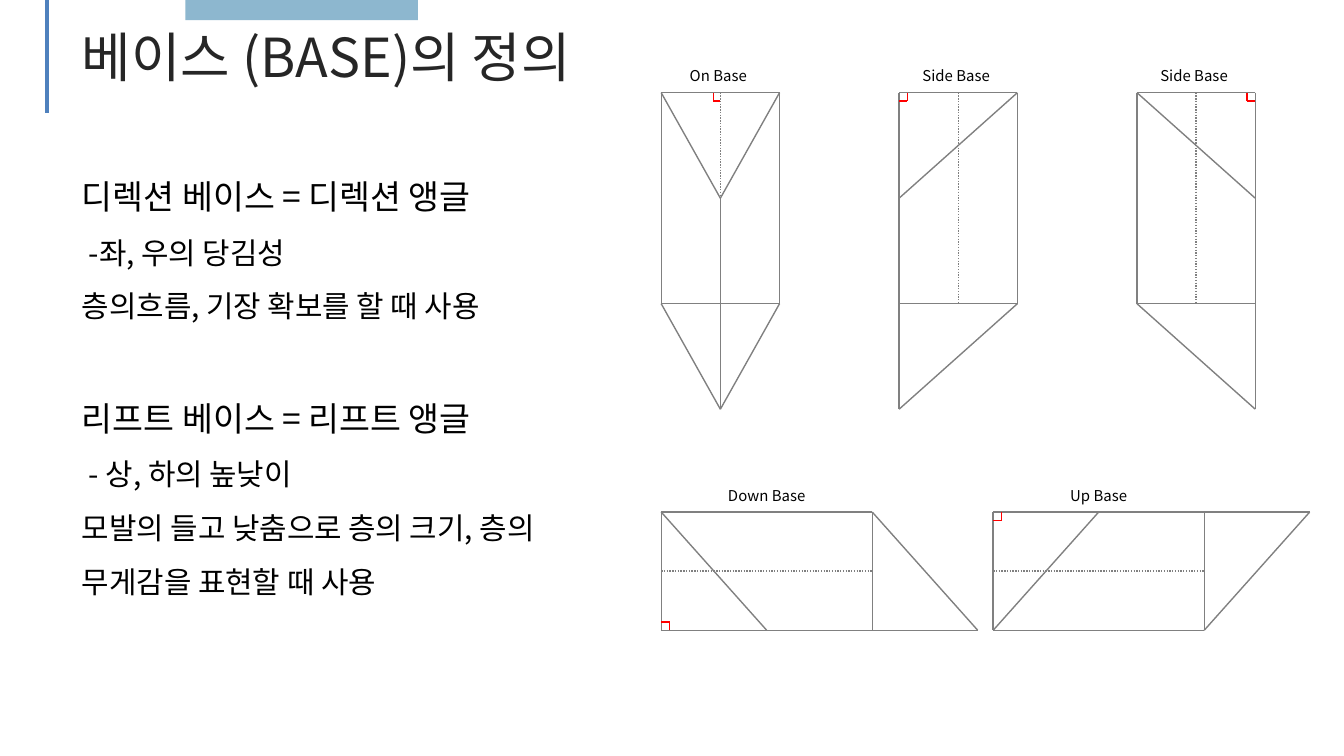
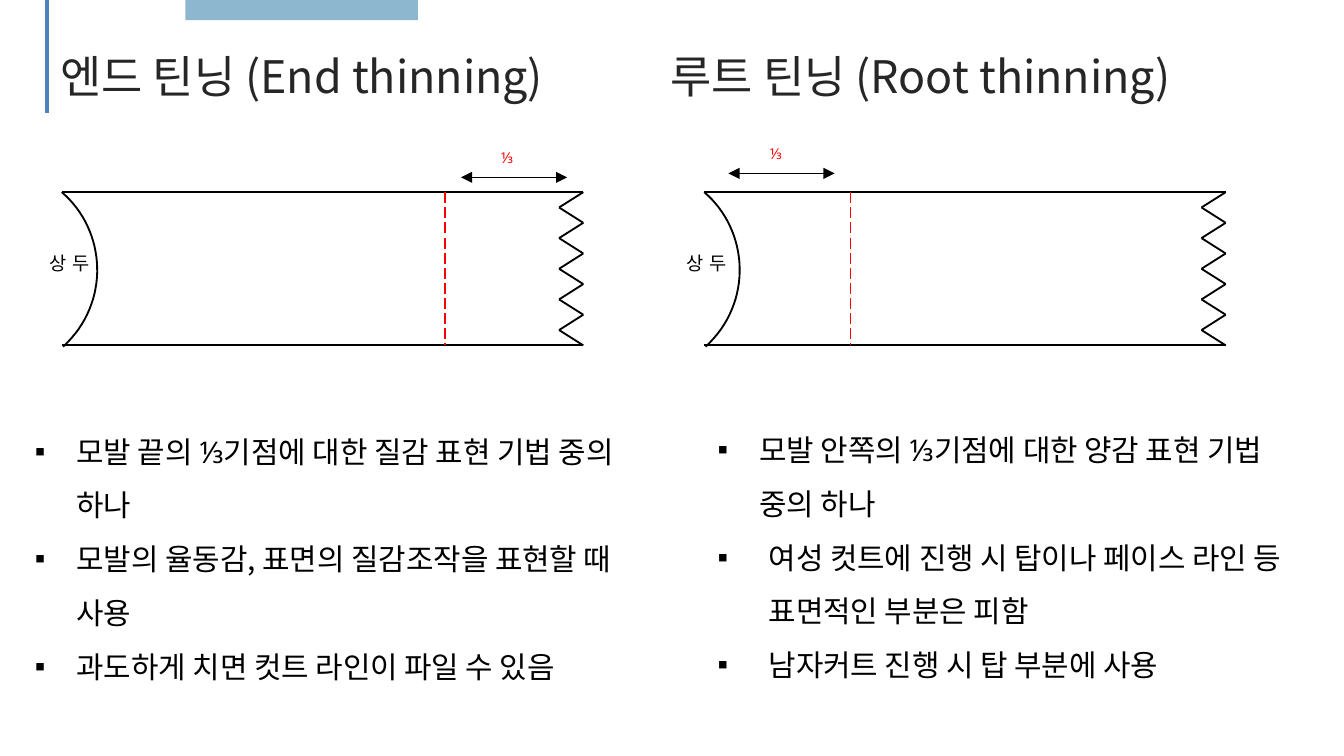
from lxml import etree
from pptx import Presentation
from pptx.dml.color import RGBColor
from pptx.enum.dml import MSO_LINE
from pptx.enum.shapes import MSO_CONNECTOR, MSO_SHAPE
from pptx.enum.text import MSO_ANCHOR, MSO_AUTO_SIZE, PP_ALIGN
from pptx.oxml.ns import qn
from pptx.util import Inches, Pt

STRAIGHT = MSO_CONNECTOR.STRAIGHT
RECT = MSO_SHAPE.RECTANGLE
DOTS, DASHES = MSO_LINE.ROUND_DOT, MSO_LINE.LONG_DASH
LEFT, CENTER = PP_ALIGN.LEFT, PP_ALIGN.CENTER
MIDDLE, TOP = MSO_ANCHOR.MIDDLE, MSO_ANCHOR.TOP
FIXED = MSO_AUTO_SIZE.NONE

WIDE = 10
HIGH = WIDE * 9 / 16
FONT = "Noto Sans CJK KR"
BLACK, INK, GRAY, RED = "000000", "262626", "808080", "FF0000"
BAND, BLUE = "8DB7CF", "4F81BD"

# Base diagrams: u runs across the panel, v along its length.
PANEL_W, PANEL_L = 0.88, 1.57
FRAME = [(0, 0, 0, 1), (1, 0, 1, 1), (0, 1, 1, 1), (0, 0, 1, 0)]
ON_FOLDS = [(0, 0, 0.5, 0.5), (1, 0, 0.5, 0.5), (0.5, 0.5, 0.5, 1.5),
            (0, 1, 0.5, 1.5), (1, 1, 0.5, 1.5)]
ON_MARK = [(0.44, 0, 0.44, 0.04), (0.5, 0.04, 0.44, 0.04)]
SIDE_FOLDS = [(1, 0, 0, 0.5), (1, 1, 0, 1.5), (0, 0.5, 0, 1.5)]
SIDE_MARK = [(0.07, 0, 0.07, 0.04), (0, 0.04, 0.07, 0.04)]

# Hair strands
HAIR_W, HAIR_H, HAIR_TOP = 3.88, 1.14, 1.43
TEETH, TOOTH = 5, 0.18


def color(value):
    return RGBColor.from_string(value)


def place(shape, x, y, w, h):
    shape.left, shape.top = Inches(x), Inches(y)
    shape.width, shape.height = Inches(w), Inches(h)


def add(parent, tag, **attrs):
    return etree.SubElement(parent, qn(tag), attrs)


def style(para, size, tint=BLACK, font=FONT):
    for run in para.runs:
        run.font.size = Pt(size)
        run.font.color.rgb = color(tint)
        run.font.name = font
        add(run.font._element, "a:ea", typeface=FONT)


def rule(shapes, x1, y1, x2, y2, tint=GRAY, width=0.75, dash=None, heads=False):
    line = shapes.add_connector(STRAIGHT, Inches(x1), Inches(y1), Inches(x2), Inches(y2))
    line.line.color.rgb = color(tint)
    line.line.width = Pt(width)
    if dash:
        line.line.dash_style = dash
    props = line.element.spPr
    if heads:
        for end in ("a:headEnd", "a:tailEnd"):
            add(props.find(qn("a:ln")), end, type="triangle")
    add(props, "a:effectLst")


def label(shapes, text, x, y, w, h, size=8, tint=BLACK, align=LEFT, wrap=True):
    box = shapes.add_textbox(Inches(x), Inches(y), Inches(w), Inches(h))
    frame = box.text_frame
    frame.text = text
    frame.word_wrap = wrap
    frame.paragraphs[0].alignment = align
    style(frame.paragraphs[0], size, tint)
    return frame


def add_band(prs, slide):
    """Put the colour band on the master, so that every slide shows it."""
    band = slide.shapes.add_shape(RECT, Inches(1.38), Inches(-0.02), Inches(1.73), Inches(0.17))
    band.shadow.inherit = False
    band.fill.solid()
    band.fill.fore_color.rgb = color(BAND)
    band.line.fill.background()
    prs.slide_master.shapes.element.append(band.element)


def head(slide, text, x, y, w, size, tab=None):
    rule(slide.shapes, 0.35, -0.05, 0.35, 0.84, BLUE, 2)
    title = slide.shapes.title
    place(title, x, y, w, 0.84)
    frame = title.text_frame
    frame.text = text
    frame.auto_size = FIXED
    frame.vertical_anchor = MIDDLE
    para = frame.paragraphs[0]
    if tab:
        stops = add(para._p.get_or_add_pPr(), "a:tabLst")
        add(stops, "a:tab", pos=str(Inches(tab)), algn="l")
    para.alignment = LEFT
    style(para, size, INK)


def body(slide, index, box, items):
    """Fill a body placeholder; items are (text, size, indent, bullet, gap, font)."""
    holder = slide.placeholders[index]
    place(holder, *box)
    frame = holder.text_frame
    frame.auto_size = FIXED
    frame.vertical_anchor = TOP
    for i, (text, size, indent, bullet, gap, font) in enumerate(items):
        para = frame.add_paragraph() if i else frame.paragraphs[0]
        para.text = text
        props = para._p.get_or_add_pPr()
        props.set("marL", str(Inches(indent)))
        props.set("indent", str(Inches(-indent if bullet else 0)))
        if bullet:
            add(props, "a:buChar", char=bullet)
        else:
            add(props, "a:buNone")
        para.alignment = LEFT
        para.line_spacing = Pt(1.8 * size)
        para.space_before = Pt(gap)
        para.space_after = Pt(0)
        style(para, size, font=font)


def panel(slide, x, y, folds, mark, upright=True, flip=False):
    group = slide.shapes.add_group_shape().shapes

    def spot(u, v):
        u = 1 - u if flip else u
        if upright:
            return x + u * PANEL_W, y + v * PANEL_L
        return x + v * PANEL_L, y + u * PANEL_W

    def draw(parts, **look):
        for u1, v1, u2, v2 in parts:
            rule(group, *spot(u1, v1), *spot(u2, v2), **look)

    draw(FRAME)
    draw([(0.5, 0, 0.5, 1)], dash=DOTS)
    draw(folds)
    draw(mark, tint=RED)


def curve(shapes, x, y):
    """Draw the scalp edge as a Bezier arc that starts at x, y."""
    xs, ys = (0, 0.33, 0.37, 0.01), (0, 0.28, 0.82, 1.15)

    def blend(c, t):
        s = 1 - t
        return c[0] * s**3 + 3 * c[1] * s * s * t + 3 * c[2] * s * t * t + c[3] * t**3

    steps = 32
    dots = [(Inches(x + blend(xs, i / steps)), Inches(y + blend(ys, i / steps)))
            for i in range(steps + 1)]
    pen = shapes.build_freeform(*dots[0])
    pen.add_line_segments(dots[1:], close=False)
    arc = pen.convert_to_shape()
    arc.shadow.inherit = False
    arc.fill.background()
    arc.line.color.rgb = color(BLACK)
    arc.line.width = Pt(1)


def strand(slide, x, cut, span, rise, note):
    """Draw a strand at x; cut, span and note are offsets from its left edge."""
    group = slide.shapes.add_group_shape().shapes
    y, right, base = HAIR_TOP, x + HAIR_W, HAIR_TOP + HAIR_H
    rule(group, right, y, x, y, BLACK, 1)
    curve(group, x, y)
    rule(group, right, base, x, base, BLACK, 1)
    step = HAIR_H / (2 * TEETH)
    zigzag = [(right - TOOTH * (i % 2), y + i * step) for i in range(2 * TEETH + 1)]
    for start, end in zip(zigzag, zigzag[1:]):
        rule(group, *start, *end, BLACK, 1)
    rule(group, x + cut, y, x + cut, base, RED, dash=DASHES)
    rule(group, x + span, y - rise, x + span + 0.79, y - rise, BLACK, 0.25, heads=True)
    label(group, "⅓", x + note, y - rise - 0.26, 0.31, 0.24, tint=RED, wrap=False)


def base_slide(slide):
    head(slide, "베이스 (BASE)의 정의", 0.51, 0, 4.34, 28.8)
    rows = [("디렉션 베이스 = 디렉션 앵글", 18, 0, 0),
            ("-좌, 우의 당김성", 16, 0.05, 0),
            ("층의흐름, 기장 확보를 할 때 사용", 16, 0, 0),
            ("리프트 베이스 = 리프트 앵글", 18, 0, 28.8),
            ("- 상, 하의 높낮이", 16, 0.05, 0),
            ("모발의 들고 낮춤으로 층의 크기, 층의 무게감을 표현할 때 사용", 16, 0, 0)]
    body(slide, 1, (0.51, 1.11, 4.41, 3.43),
         [(text, size, indent, None, gap, FONT) for text, size, indent, gap in rows])

    left, top, low, pitch = 4.92, 0.69, 3.81, 1.77
    tall = [("On Base", ON_FOLDS, ON_MARK, False),
            ("Side Base", SIDE_FOLDS, SIDE_MARK, False),
            ("Side Base", SIDE_FOLDS, SIDE_MARK, True)]
    for i, (name, folds, mark, flip) in enumerate(tall):
        x = left + i * pitch
        panel(slide, x, top, folds, mark, flip=flip)
        label(slide.shapes, name, x, top - 0.24, 0.85, 0.24, align=CENTER)
    for name, x, flip in (("Down Base", left, True), ("Up Base", 7.39, False)):
        panel(slide, x, low, SIDE_FOLDS, SIDE_MARK, upright=False, flip=flip)
        label(slide.shapes, name, x + 0.36, low - 0.24, 0.85, 0.24, align=CENTER)


def thinning_slide(slide):
    head(slide, "엔드 틴닝 (End thinning)\t루트 틴닝 (Root thinning)", 0.35, 0.14, 9.65, 24, tab=4.54)
    ends = [("모발 끝의 ⅓기점에 대한 질감 표현 기법 중의 하나", 0.31, FONT),
            ("모발의 율동감, 표면의 질감조작을 표현할 때 사용", 0.31, FONT),
            ("과도하게 치면 컷트 라인이 파일 수 있음", 0.31, FONT)]
    roots = [("모발 안쪽의 ⅓기점에 대한 양감 표현 기법 중의 하나", 0.31, FONT),
             ("여성 컷트에 진행 시 탑이나 페이스 라인 등 표면적인 부분은 피함", 0.38, "Arial"),
             ("남자커트 진행 시 탑 부분에 사용", 0.38, "Arial")]
    for index, box, rows in ((1, (0.16, 3.04, 4.92, 2.52), ends),
                             (2, (5.24, 3.03, 4.65, 2.12), roots)):
        body(slide, index, box,
             [(text, 16, indent, "▪", 0, font) for text, indent, font in rows])

    strand(slide, 0.46, cut=2.85, span=2.97, rise=0.11, note=3.17)
    strand(slide, 5.24, cut=1.09, span=0.18, rise=0.14, note=0.39)
    for x in (0.36, 5.1):
        frame = label(slide.shapes, "두상", x, 1.79, 0.37, 0.44, size=10)
        frame._txBody.bodyPr.set("vert", "eaVert")


def main():
    prs = Presentation()
    prs.slide_width, prs.slide_height = Inches(WIDE), Inches(HIGH)
    first = prs.slides.add_slide(prs.slide_layouts[1])
    add_band(prs, first)
    base_slide(first)
    thinning_slide(prs.slides.add_slide(prs.slide_layouts[3]))
    prs.save("out.pptx")


if __name__ == "__main__":
    main()
